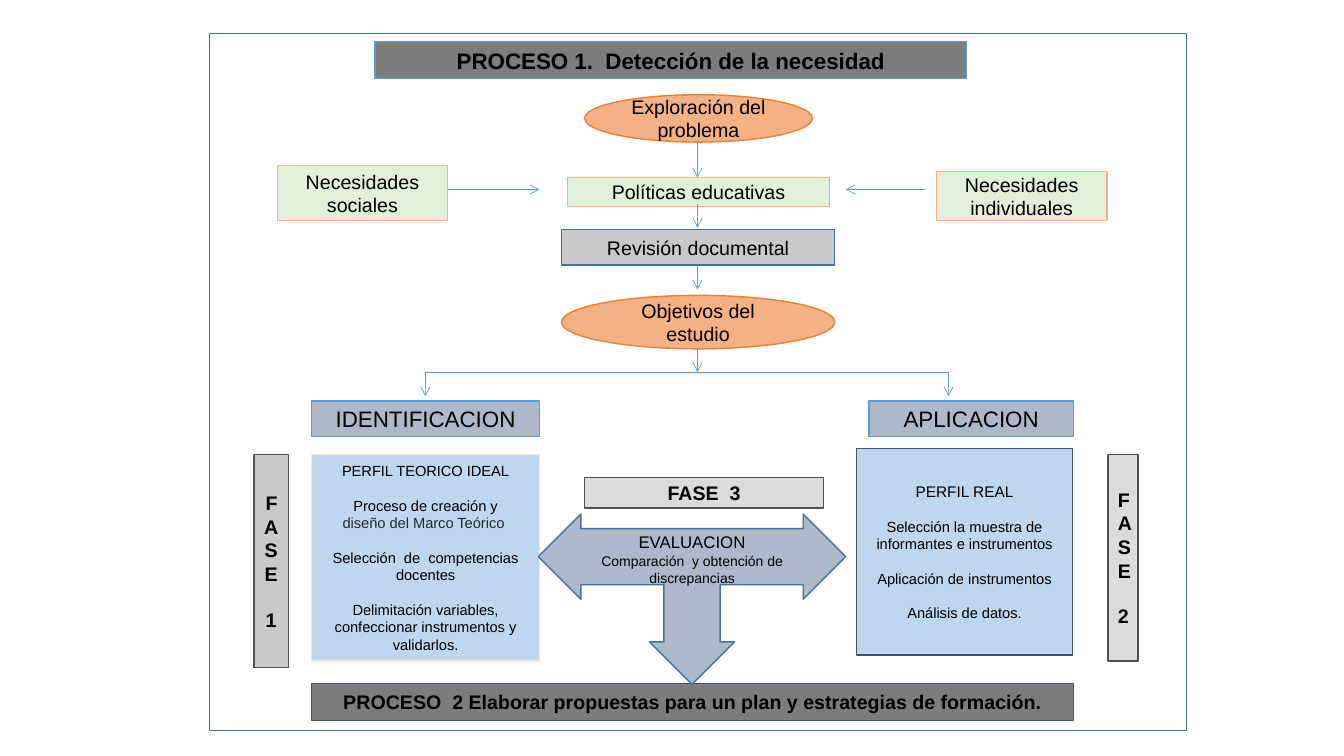
from dataclasses import dataclass
from typing import Any

from lxml.etree import SubElement as Sub
from pptx import Presentation as Deck
from pptx.dml.color import RGBColor as Rgb
from pptx.enum.shapes import MSO_CONNECTOR as Link, MSO_SHAPE as Kind
from pptx.enum.text import MSO_ANCHOR as Anchor, PP_ALIGN as Align
from pptx.oxml.ns import qn
from pptx.util import Inches, Pt

HUES = {
    "white": "FFFFFF", "black": "000000", "ink": "222A35", "dark": "7C7C7C",
    "grey": "C9C9C9", "pale": "DBDBDB", "coal": "525252", "slate": "44546A",
    "steel": "ADB9CA", "sky": "BDD7EE", "blue": "5B9BD5", "navy": "43739E",
    "mint": "E2F0D9", "peach": "F4B183", "flame": "ED7D31", "cream": "FBE5D6",
}

# Shares of the slide, in percent, that several parts have in common
LEFT, MID, SIDE = 23.2, 51.9, 25.07
FORK, FORK_L, FORK_R = 49.2, 31.65, 70.58


@dataclass
class Line:
    text: str
    size: float = 14
    gap: float = 0
    bold: bool = False
    hue: str = "black"


@dataclass
class Box:
    x: float
    y: float
    w: float
    h: float
    fill: str
    edge: str
    lines: tuple[Line, ...] = ()
    kind: Any = Kind.RECTANGLE


@dataclass
class Wire:
    x1: float
    y1: float
    x2: float
    y2: float
    head: bool = True


def phase(num: str) -> tuple[Line, ...]:
    return Line("FASE", bold=True), Line(num, gap=16, bold=True)


FRAME = Box(15.6, 4.4, 72.68, 92.27, "white", "navy")
BOXES = [
    # Process bars
    Box(27.9, 5.5, 44.03, 4.9, "dark", "blue",
        (Line("PROCESO 1.  Detección de la necesidad", 16, bold=True),)),
    Box(LEFT, 90.4, 56.7, 4.9, "dark", "slate",
        (Line("PROCESO  2 Elaborar propuestas para un plan y estrategias de formación.",
              bold=True),)),
    # Needs and study steps
    Box(20.63, 21.87, 12.68, 7.33, "mint", "peach", (Line("Necesidades sociales"),)),
    Box(42.23, 23.47, 19.5, 3.87, "mint", "peach", (Line("Políticas educativas"),)),
    Box(69.68, 22.67, 12.68, 6.53, "mint", "peach", (Line("Necesidades individuales"),)),
    Box(43.5, 12.53, 16.95, 6.27, "peach", "flame",
        (Line("Exploración del problema"),), Kind.OVAL),
    Box(41.78, 39.07, 20.33, 7.07, "peach", "flame",
        (Line("Objetivos del estudio"),), Kind.OVAL),
    Box(41.78, 30.4, 20.33, 4.67, "grey", "navy", (Line("Revisión documental"),)),
    # Branch heads and phase tags
    Box(LEFT, 53.07, 16.95, 4.67, "steel", "blue", (Line("IDENTIFICACION", 16),)),
    Box(64.65, 53.07, 15.23, 4.67, "steel", "blue", (Line("APLICACION", 16),)),
    Box(18.9, 60.13, 2.55, 28.13, "grey", "coal", phase("1")),
    Box(82.43, 60.13, 2.25, 27.33, "pale", "coal", phase("2")),
    Box(43.5, 63.2, 17.78, 4, "pale", "coal", (Line("FASE  3", bold=True),)),
    # Profiles
    Box(63.75, 59.33, 16.05, 27.33, "sky", "slate", (
        Line("PERFIL REAL", 11),
        Line("Selección la muestra de informantes e instrumentos", 10.5, 12),
        Line("Aplicación de instrumentos", 10.5, 12),
        Line("Análisis de datos.", 10.5, 12))),
    Box(LEFT, 60.13, 16.95, 27.33, "sky", "cream", (
        Line("PERFIL TEORICO IDEAL", 10.5),
        Line("Proceso de creación y", 10.5, 12),
        Line("diseño del Marco Teórico ", 10.5, hue="ink"),
        Line("Selección  de  competencias docentes", 10.5, 12),
        Line("Delimitación variables, confeccionar instrumentos y validarlos.", 10.5, 12))),
]
ARROW = Box(40.05, 68, 22.88, 22.53, "steel", "navy", kind=Kind.LEFT_RIGHT_UP_ARROW)
NOTE = Box(40.95, 69.73, 21.08, 8.53, "", "", (
    Line("EVALUACION", 12), Line("Comparación  y obtención de discrepancias", 10)))
WIRES = [
    Wire(33.3, SIDE, 40.13, SIDE),
    Wire(68.85, SIDE, 62.93, SIDE),
    *(Wire(MID, top, MID, end) for top, end in
      ((18.8, 23.47), (26.93, 30.13), (35.2, 38.27), (46.13, FORK))),
    Wire(FORK_L, FORK, FORK_R, FORK, head=False),
    *(Wire(x, FORK, x, 52.4) for x in (FORK_L, FORK_R)),
]


def put(item: Any, look: dict[str, Any]) -> None:
    for name, value in look.items():
        setattr(item, name, value)


def tint(name: str) -> Rgb:
    return Rgb.from_string(HUES[name])


def across(share: float) -> int:
    return Inches(13.333 * share / 100)


def down(share: float) -> int:
    return Inches(7.5 * share / 100)


def place(box: Box) -> tuple[int, ...]:
    return across(box.x), down(box.y), across(box.w), down(box.h)


def write(frame: Any, lines: tuple[Line, ...]) -> None:
    frame.word_wrap = True
    for i, line in enumerate(lines):
        para = frame.paragraphs[0] if i == 0 else frame.add_paragraph()
        put(para, {"alignment": Align.CENTER, "space_before": Pt(line.gap)})
        run = para.add_run()
        run.text = line.text
        put(run.font, {"name": "Arial", "size": Pt(line.size), "bold": line.bold})
        run.font.color.rgb = tint(line.hue)


def draw(slide: Any, box: Box) -> Any:
    shape = slide.shapes.add_shape(box.kind, *place(box))
    shape.shadow.inherit = False
    shape.fill.solid()
    shape.fill.fore_color.rgb = tint(box.fill)
    shape.line.color.rgb = tint(box.edge)
    shape.line.width = Pt(1)
    shape.text_frame.vertical_anchor = Anchor.MIDDLE
    write(shape.text_frame, box.lines)
    return shape


def join(slide: Any, wire: Wire) -> None:
    link = slide.shapes.add_connector(
        Link.STRAIGHT, across(wire.x1), down(wire.y1), across(wire.x2), down(wire.y2))
    link.line.color.rgb = tint("blue")
    link.line.width = Pt(0.5)
    if wire.head:
        Sub(link.line._get_or_add_ln(), qn("a:tailEnd"), type="arrow")
    Sub(link._element.spPr, qn("a:effectLst"))


def main() -> None:
    deck = Deck()
    put(deck, {"slide_width": Inches(13.333), "slide_height": Inches(7.5)})
    slide = deck.slides.add_slide(deck.slide_layouts[6])

    # Frame, boxes and links
    for box in (FRAME, *BOXES):
        draw(slide, box)
    for wire in WIRES:
        join(slide, wire)

    # Evaluation arrow, pointing down, with its text
    arrow = draw(slide, ARROW)
    arrow.rotation = 180
    for i, share in enumerate((0.33, 0.25, 0.25)):
        arrow.adjustments[i] = share
    write(slide.shapes.add_textbox(*place(NOTE)).text_frame, NOTE.lines)

    deck.save("out.pptx")


if __name__ == "__main__":
    main()
